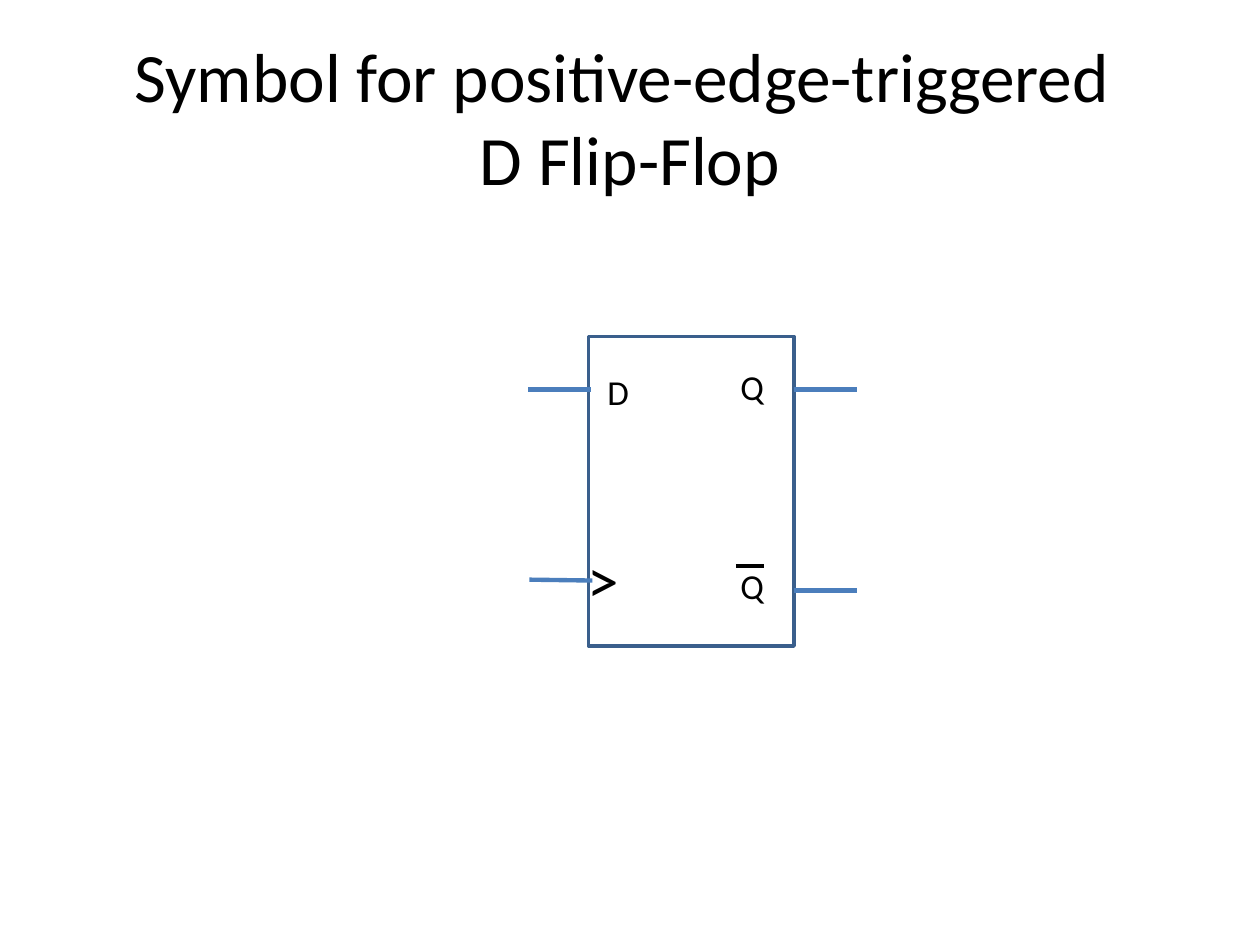
from lxml import etree
from pptx import Presentation
from pptx.dml.color import RGBColor
from pptx.enum import shapes, text
from pptx.oxml import ns
from pptx.util import Pt

BLACK = RGBColor(0x00, 0x00, 0x00)
WHITE = RGBColor(0xFF, 0xFF, 0xFF)
OUTLINE = RGBColor(0x3A, 0x5F, 0x8C)
WIRE = RGBColor(0x4B, 0x7E, 0xBC)


class Diagram:
    """Draws a logic symbol on one slide in a single style."""

    font = "Calibri"

    def __init__(self, slide):
        self.s = slide

    def box(self, x, y, w, h):
        sp = self.s.shapes.add_shape(shapes.MSO_SHAPE.RECTANGLE, Pt(x), Pt(y), Pt(w), Pt(h))
        sp.shadow.inherit = False
        sp.fill.solid()
        sp.fill.fore_color.rgb = WHITE
        sp.line.color.rgb = OUTLINE
        sp.line.width = Pt(2)

    def label(self, lines, x, y, w, h, size=20, align=text.PP_ALIGN.LEFT,
              anchor=text.MSO_ANCHOR.TOP):
        tf = self.s.shapes.add_textbox(Pt(x), Pt(y), Pt(w), Pt(h)).text_frame
        tf.word_wrap = True
        tf.vertical_anchor = anchor
        p = tf.paragraphs[0]
        p.alignment = align
        for i, line in enumerate(lines):
            if i:
                p.add_line_break()
            r = p.add_run()
            r.text = line
            r.font.name = self.font
            r.font.size = Pt(size)
            r.font.color.rgb = BLACK

    def line(self, x1, y1, x2, y2, color=WIRE, width=2.5):
        sp = self.s.shapes.add_connector(
            shapes.MSO_CONNECTOR.STRAIGHT, Pt(x1), Pt(y1), Pt(x2), Pt(y2))
        sp.line.color.rgb = color
        sp.line.width = Pt(width)
        etree.SubElement(sp.element.spPr, ns.qn("a:effectLst"))


def main():
    prs = Presentation()
    prs.slide_width, prs.slide_height = Pt(720), Pt(540)
    d = Diagram(prs.slides.add_slide(prs.slide_layouts[6]))

    d.label(["Symbol for positive-edge-triggered ", "D Flip-Flop"], 36, 21.6, 648, 90,
            39.6, text.PP_ALIGN.CENTER, text.MSO_ANCHOR.MIDDLE)

    d.box(336.25, 192.25, 117.5, 177)
    d.label(["D"], 340, 208, 32, 30)
    d.label([">"], 328.5, 305.25, 57, 51, 36)
    for y in (205.25, 319):
        d.label(["Q"], 416, y, 32, 30)
    d.line(420.5, 323.5, 436.5, 323.5, BLACK, 2)

    for x, y, rise in ((302, 222.5, 0), (302.5, 331.25, 0.5),
                       (453.5, 337.5, 0), (453.5, 222.5, 0)):
        d.line(x, y, x + 36, y + rise)

    prs.save("out.pptx")


if __name__ == "__main__":
    main()
